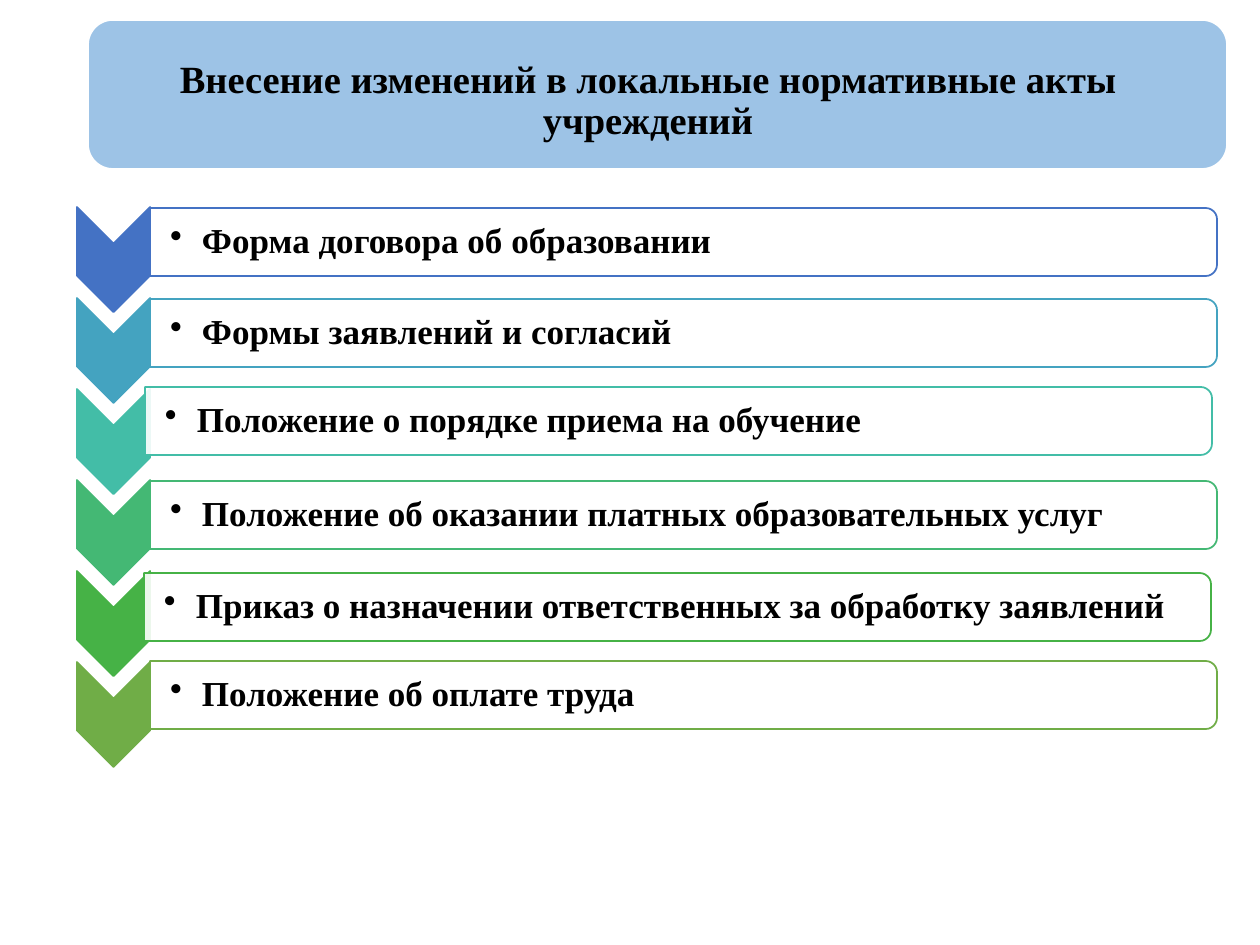
from lxml import etree
from pptx import Presentation
from pptx import util as u
from pptx.dml.color import RGBColor
from pptx.enum import shapes, text
from pptx.oxml.ns import qn

SCALE = 914400 / 126
FONT = "Times New Roman"
COLORS = {
    "banner": "9DC3E6",
    "white": "FFFFFF",
    "text": "000000",
    "blue": "4472C4",
    "cyan": "44A3C0",
    "teal": "43BDA7",
    "mint": "44B874",
    "green": "46B246",
    "olive": "70AD47",
}
ROW_PITCH = 91
ROWS = [
    ("Форма договора об образовании", "blue", 0, 0),
    ("Формы заявлений и согласий", "cyan", 0, 0),
    ("Положение о порядке приема на обучение", "teal", -5, -3),
    ("Положение об оказании платных образовательных услуг", "mint", 0, 0),
    ("Приказ о назначении ответственных за обработку заявлений", "green", -6, 1),
    ("Положение об оплате труда", "olive", 0, -2),
]


def px(value):
    return u.Emu(round(value * SCALE))


def color(name):
    return RGBColor.from_string(COLORS[name])


def add_box(page, kind, left, top, width, height, fill, line):
    box = page.shapes.add_shape(kind, px(left), px(top), px(width), px(height))
    box.shadow.inherit = False
    box.fill.solid()
    box.fill.fore_color.rgb = color(fill)
    box.line.color.rgb = color(line)
    box.line.width = u.Pt(1)
    return box


def add_turned_box(page, kind, left, top, width, height, fill, line):
    shift = (width - height) / 2
    box = add_box(page, kind, left + shift, top - shift, height, width, fill, line)
    box.rotation = 90
    return box


def write_text(box, words, size, insets):
    frame = box.text_frame
    frame.word_wrap = True
    frame.auto_size = text.MSO_AUTO_SIZE.NONE
    frame.vertical_anchor = text.MSO_ANCHOR.MIDDLE
    frame.margin_left, frame.margin_top, frame.margin_right, frame.margin_bottom = map(px, insets)
    frame.text = words
    para = frame.paragraphs[0]
    para.line_spacing = 0.9
    para.font.name = FONT
    para.font.size = u.Pt(size)
    para.font.bold = True
    para.font.color.rgb = color("text")
    return para


def add_bullet(para, indent):
    properties = para._p.get_or_add_pPr()
    properties.set("marL", str(px(indent)))
    properties.set("indent", str(-px(indent)))
    bullet = etree.Element(qn("a:buChar"), char="•")
    properties.find(qn("a:defRPr")).addprevious(bullet)


def add_banner(page, left, top, width, height):
    add_box(page, shapes.MSO_SHAPE.ROUNDED_RECTANGLE, left, top, width, height,
            "banner", "white")
    title = page.shapes.title
    title.left, title.top = px(left), px(top + 14)
    title.width, title.height = px(width - 19), px(height - 14)
    para = write_text(title, "Внесение изменений в локальные нормативные акты учреждений",
                      22, (11, 11, 11, 11))
    para.alignment = text.PP_ALIGN.CENTER
    title.element.getparent().append(title.element)


def add_row(page, left, top, words, accent, shift_x, shift_y):
    add_turned_box(page, shapes.MSO_SHAPE.CHEVRON, left, top, 73, 105, accent, accent)
    box_left, box_top = left + 73 + shift_x, top + 1 + shift_y
    panel = add_turned_box(page, shapes.MSO_SHAPE.ROUND_2_SAME_RECTANGLE,
                           box_left, box_top, 1067, 68, "white", accent)
    fill_color = panel.element.spPr.find(qn("a:solidFill"))[0]
    etree.SubElement(fill_color, qn("a:alpha"), val="90000")
    label = page.shapes.add_textbox(px(box_left), px(box_top + 3), px(1063), px(62))
    para = write_text(label, words, 20, (20, 1, 1, 1))
    para.alignment = text.PP_ALIGN.LEFT
    add_bullet(para, 32)


def add_list(page, left, top):
    for index, row in enumerate(ROWS):
        add_row(page, left, top + index * ROW_PITCH, *row)


def main():
    deck = Presentation()
    deck.slide_width, deck.slide_height = px(1260), px(945)
    page = deck.slides.add_slide(deck.slide_layouts[5])
    add_list(page, 77, 207)
    add_banner(page, 88, 20, 1139, 149)
    deck.save("out.pptx")


if __name__ == "__main__":
    main()
